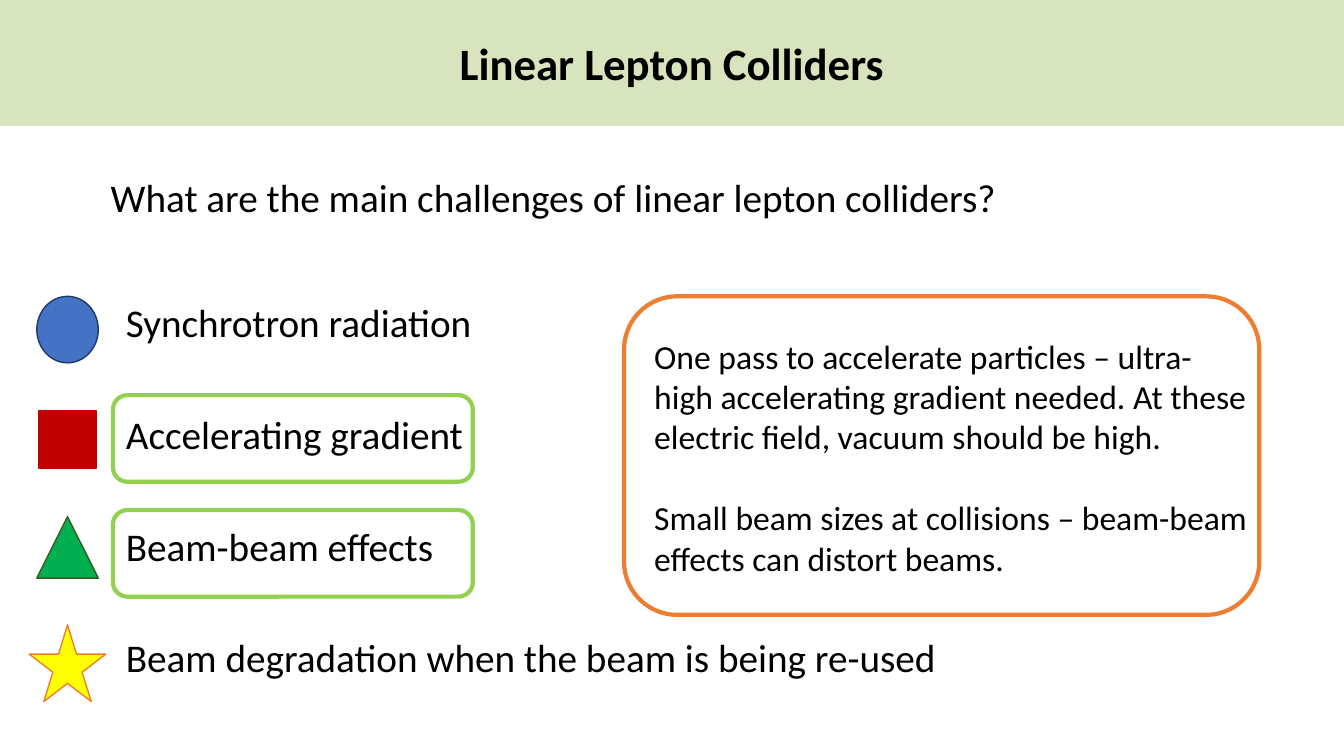
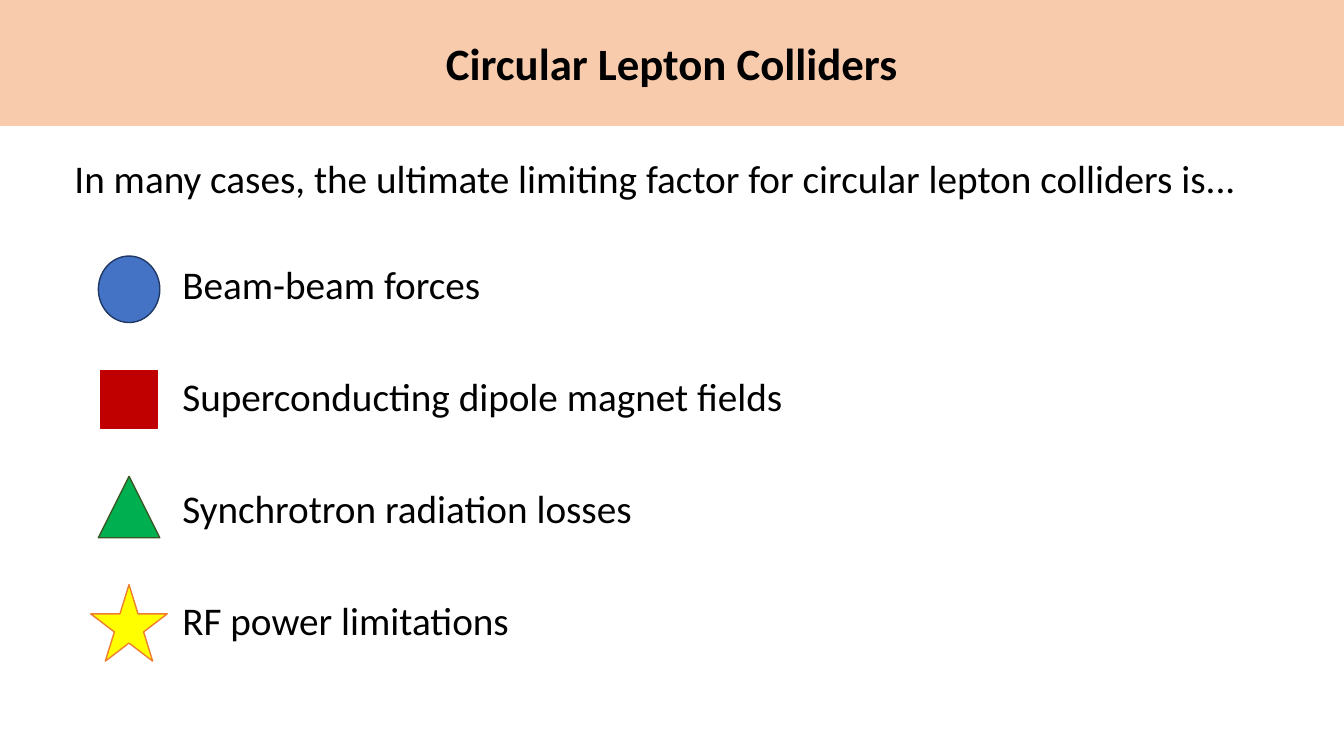
"""Build two quiz slides about lepton colliders."""
from pptx import Presentation
from pptx.dml.color import RGBColor
from pptx.enum.shapes import MSO_SHAPE
from pptx.enum.text import MSO_ANCHOR, PP_ALIGN
from pptx.util import Inches, Pt

FONT = "Calibri"
COLORS = {
    "text": "000000", "linear": "D8E4BE", "circular": "F8CBAD",
    "blue": "4472C4", "navy": "203864", "red": "C00000",
    "green": "00B050", "forest": "385723", "yellow": "FFFF00",
    "orange": "ED7D31", "lime": "92D050",
}
SLIDE_WIDTH, SLIDE_HEIGHT, BAND_HEIGHT = 13.33, 7.5, 1.25
ANSWER_WIDTH, ANSWER_HEIGHT = 10.79, 4.19
ANSWER_GAP = 49.7

# shape, width, height, centre below the first marker, fill, line
MARKERS = [
    (MSO_SHAPE.OVAL, 0.61, 0.66, 0, "blue", "navy"),
    (MSO_SHAPE.RECTANGLE, 0.57, 0.57, 1.09, "red", "red"),
    (MSO_SHAPE.ISOSCELES_TRIANGLE, 0.61, 0.61, 2.16, "green", "forest"),
    (MSO_SHAPE.STAR_5_POINT, 0.76, 0.76, 3.31, "yellow", "orange"),
]

QUIZZES = [
    {
        "title": "Linear Lepton Colliders",
        "band": "linear",
        "question": "What are the main challenges of linear lepton colliders?",
        "question_box": (1, 1.72, 11.34, 0.79),
        "answers": [
            "Synchrotron radiation",
            "Accelerating gradient",
            "Beam-beam effects",
            "Beam degradation when the beam is being re-used",
        ],
        "answers_at": (1.15, 2.96),
        "first_marker": (0.67, 3.27),
        "correct_boxes": [(1.12, top, 3.57, 0.86) for top in (3.92, 5.06)],
        "explanation": [
            "One pass to accelerate particles – ultra-high accelerating gradient "
            "needed. At these electric field, vacuum should be high.",
            "Small beam sizes at collisions – beam-beam effects can distort beams.",
        ],
        "explanation_box": (6.39, 3.28, 6.09, 3.06),
        "explanation_frame": (6.19, 2.94, 6.3, 3.16),
    },
    {
        "title": "Circular Lepton Colliders",
        "band": "circular",
        "question": "In many cases, the ultimate limiting factor for circular "
                    "lepton colliders is...",
        "question_box": (0.64, 1.53, 12.05, 0.79),
        "answers": [
            "Beam-beam forces",
            "Superconducting dipole magnet fields",
            "Synchrotron radiation losses",
            "RF power limitations",
        ],
        "answers_at": (1.71, 2.59),
        "first_marker": (1.28, 2.87),
    },
]


def color(name):
    return RGBColor.from_string(COLORS[name])


def write(frame, paragraphs, size=28, bold=False, align=PP_ALIGN.LEFT,
          anchor=MSO_ANCHOR.TOP, spacing=0.9, gap=0):
    frame.word_wrap = True
    frame.vertical_anchor = anchor
    for index, text in enumerate(paragraphs):
        paragraph = frame.add_paragraph() if index else frame.paragraphs[0]
        paragraph.alignment = align
        paragraph.line_spacing = spacing
        paragraph.space_before = Pt(gap if index else 0)
        run = paragraph.add_run()
        run.text = text
        run.font.name = FONT
        run.font.size = Pt(size)
        run.font.bold = bold
        run.font.color.rgb = color("text")


def add_text(slide, box, paragraphs, **style):
    frame = slide.shapes.add_textbox(*map(Inches, box)).text_frame
    write(frame, paragraphs, **style)


def add_figure(slide, kind, box, fill=None, line=None, weight=1):
    figure = slide.shapes.add_shape(kind, *map(Inches, box))
    figure.shadow.inherit = False
    if fill:
        figure.fill.solid()
        figure.fill.fore_color.rgb = color(fill)
    else:
        figure.fill.background()
    if line:
        figure.line.color.rgb = color(line)
        figure.line.width = Pt(weight)
    else:
        figure.line.fill.background()
    return figure


def add_markers(slide, center_x, first_y):
    for kind, width, height, drop, fill, line in MARKERS:
        box = (center_x - width / 2, first_y + drop - height / 2, width, height)
        add_figure(slide, kind, box, fill, line)


def add_quiz(deck, quiz):
    slide = deck.slides.add_slide(deck.slide_layouts[6])
    band = add_figure(slide, MSO_SHAPE.RECTANGLE,
                      (0, 0, SLIDE_WIDTH, BAND_HEIGHT), quiz["band"])
    write(band.text_frame, [quiz["title"]], size=32, bold=True,
          align=PP_ALIGN.CENTER, anchor=MSO_ANCHOR.MIDDLE, spacing=1.0)
    add_text(slide, quiz["question_box"], [quiz["question"]])
    add_text(slide, (*quiz["answers_at"], ANSWER_WIDTH, ANSWER_HEIGHT),
             quiz["answers"], gap=ANSWER_GAP)
    add_markers(slide, *quiz["first_marker"])
    for box in quiz.get("correct_boxes", []):
        add_figure(slide, MSO_SHAPE.ROUNDED_RECTANGLE, box, line="lime", weight=3)
    if "explanation" in quiz:
        add_text(slide, quiz["explanation_box"], quiz["explanation"],
                 size=24, spacing=1.0, gap=29)
        add_figure(slide, MSO_SHAPE.ROUNDED_RECTANGLE,
                   quiz["explanation_frame"], line="orange", weight=3)


def main():
    deck = Presentation()
    deck.slide_width = Inches(SLIDE_WIDTH)
    deck.slide_height = Inches(SLIDE_HEIGHT)
    for quiz in QUIZZES:
        add_quiz(deck, quiz)
    deck.save("out.pptx")


if __name__ == "__main__":
    main()
